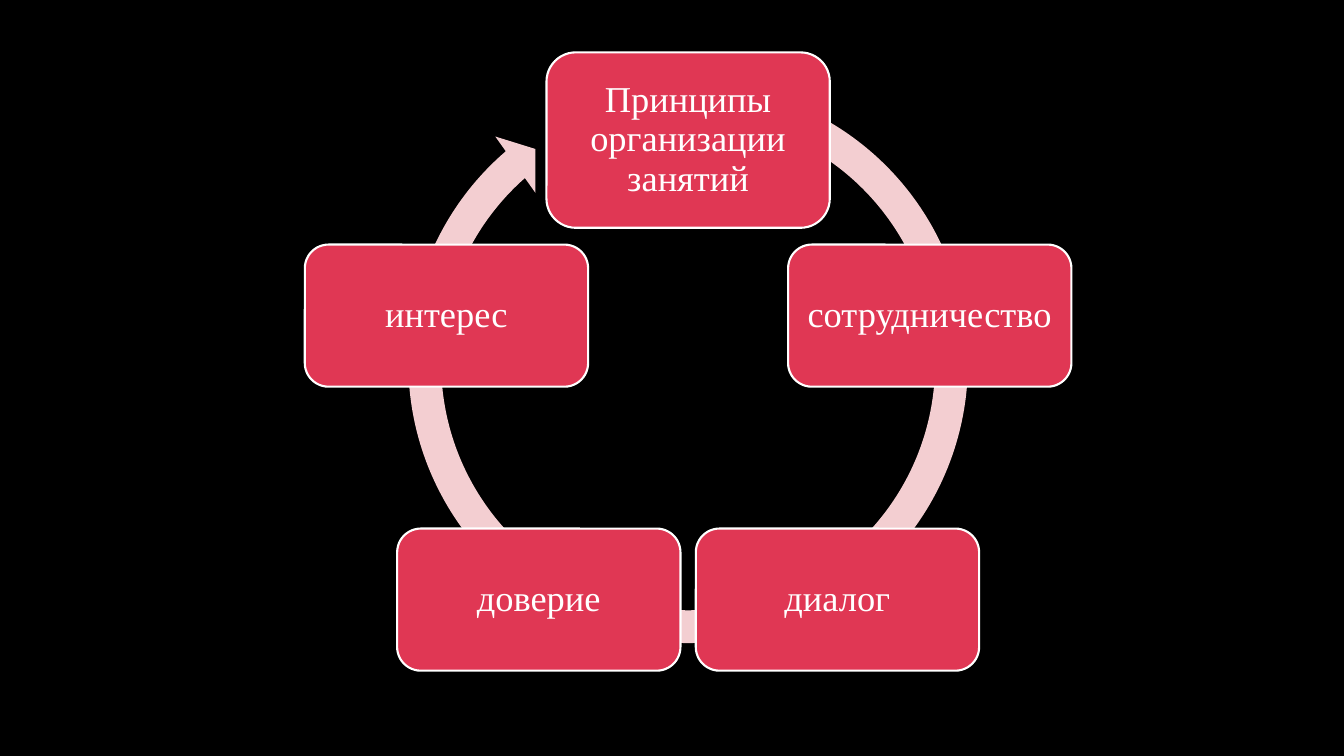
from math import cos, radians, sin

from pptx import Presentation
from pptx.dml.color import RGBColor
from pptx.enum import shapes as s, text as t
from pptx.util import Inches, Pt

BLACK = RGBColor(0x00, 0x00, 0x00)
WHITE = RGBColor(0xFF, 0xFF, 0xFF)
RED = RGBColor(0xE0, 0x37, 0x54)
PINK = RGBColor(0xF3, 0xCE, 0xD1)

deck = Presentation()
deck.slide_width = Inches(13.33)
deck.slide_height = Inches(7.5)
slide = deck.slides.add_slide(deck.slide_layouts[6])
slide.background.fill.solid()
slide.background.fill.fore_color.rgb = BLACK

ring = slide.shapes.add_shape(
    s.MSO_SHAPE.CIRCULAR_ARROW, Inches(3.87), Inches(0.65), Inches(5.91), Inches(5.91))
for i, value in enumerate([0.055, 3.31, 137.4, 174.08, 0.058]):
    ring.adjustments[i] = value
ring.shadow.inherit = False
ring.fill.solid()
ring.fill.fore_color.rgb = PINK
ring.line.fill.background()

mid_x, mid_y, radius = 6.825, 3.91, 2.52
width = 2.81
labels = ["Принципы организации занятий", "сотрудничество", "диалог", "доверие", "интерес"]

for i, label in enumerate(labels):
    angle = radians(i * 360 / len(labels))
    height = 1.74 if i == 0 else 1.41
    left = mid_x + radius * sin(angle) - width / 2
    top = mid_y - radius * cos(angle) - height / 2
    box = slide.shapes.add_shape(
        s.MSO_SHAPE.ROUNDED_RECTANGLE, Inches(left), Inches(top), Inches(width), Inches(height))
    box.shadow.inherit = False
    box.fill.solid()
    box.fill.fore_color.rgb = RED
    box.line.color.rgb = WHITE
    box.line.width = Pt(1.5)

    frame = box.text_frame
    frame.text = label
    frame.word_wrap = True
    frame.vertical_anchor = t.MSO_ANCHOR.MIDDLE
    frame.margin_left = frame.margin_right = Inches(0.11)
    frame.margin_top = frame.margin_bottom = Inches(0.11)
    para = frame.paragraphs[0]
    para.alignment = t.PP_ALIGN.CENTER
    para.line_spacing = 0.9
    font = para.runs[0].font
    font.name = "Times New Roman"
    font.size = Pt(26)
    font.color.rgb = WHITE

deck.save("out.pptx")
